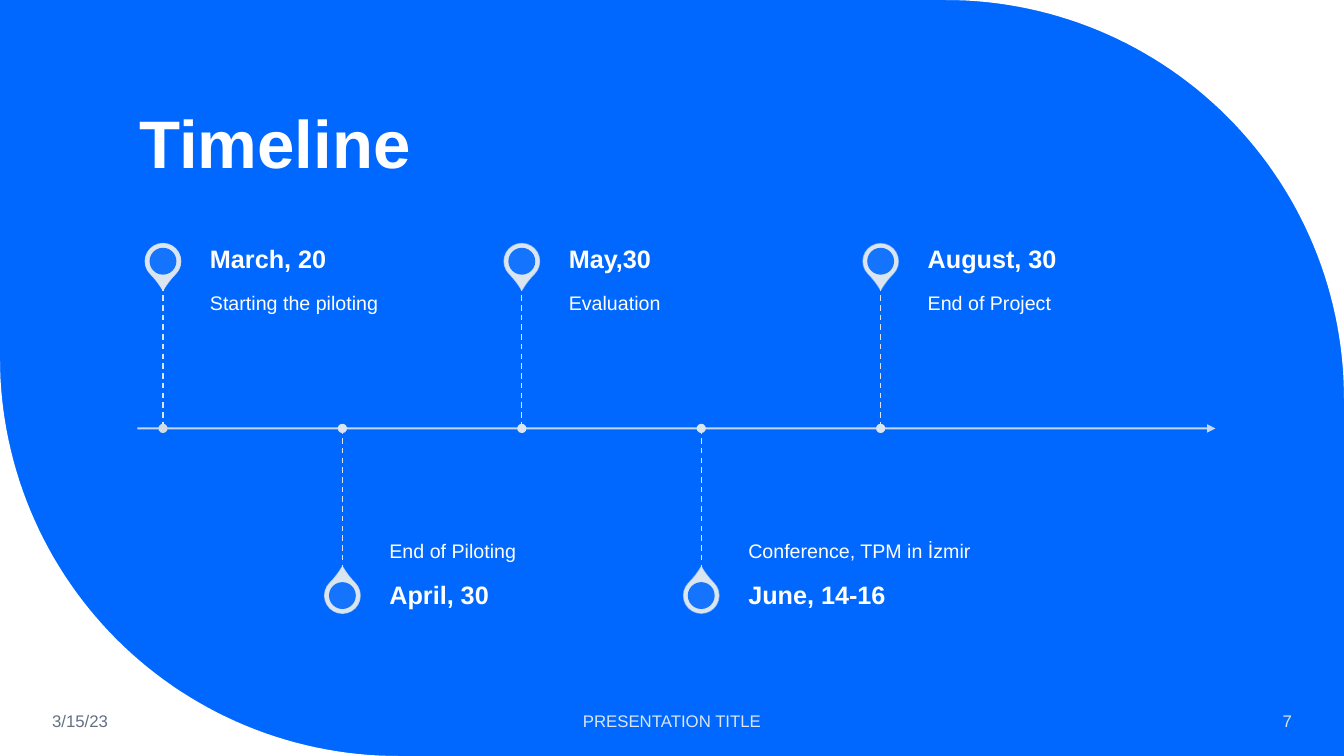
from dataclasses import dataclass
from math import cos, pi, sin

from lxml.etree import SubElement
from pptx import Presentation
from pptx.dml.color import RGBColor
from pptx.enum.dml import MSO_LINE_DASH_STYLE as Dash
from pptx.enum.shapes import MSO_CONNECTOR as Connector, MSO_SHAPE as Preset
from pptx.enum.text import MSO_ANCHOR as Anchor, PP_ALIGN as Align
from pptx.oxml.ns import qn
from pptx.util import Inches, Pt


@dataclass(frozen=True)
class Theme:
    """Colours, font and type sizes of the deck."""
    blue: str = "0068FF"
    white: str = "FFFFFF"
    mist: str = "DAE5EF"
    haze: str = "D0DBE4"
    slate: str = "637183"
    font: str = "Arial"
    title: int = 48
    date: int = 18
    body: int = 14
    footer: int = 12


class Board:
    """Draws styled elements on a slide, measured on a 160 by 90 grid."""

    def __init__(self, deck, page, theme):
        self.page, self.theme = page, theme
        self.column = deck.slide_width / 160
        self.row = deck.slide_height / 90
        self.fill(page.background, theme.blue)

    def x(self, columns):
        return round(columns * self.column)

    def y(self, rows):
        return round(rows * self.row)

    def place(self, left, top, width, height):
        return self.x(left), self.y(top), self.x(width), self.y(height)

    def fill(self, target, color):
        target.fill.solid()
        target.fill.fore_color.rgb = RGBColor.from_string(color)

    def fade(self, holder, percent):
        color = holder.find(qn("a:solidFill")).find(qn("a:srgbClr"))
        SubElement(color, qn("a:alpha"), val=str(percent * 1000))

    def corner(self, radius, turned=False):
        points = [(160, 0)]
        for step in range(61):
            angle = step / 60 * pi / 2
            points.append((160 - radius + radius * sin(angle),
                           radius - radius * cos(angle)))
        if turned:
            points = [(160 - left, 90 - top) for left, top in points]
        points = [(self.x(left), self.y(top)) for left, top in points]
        builder = self.page.shapes.build_freeform(*points[0])
        builder.add_line_segments(points[1:], close=True)
        shape = builder.convert_to_shape()
        shape.shadow.inherit = False
        self.fill(shape, self.theme.white)
        shape.line.fill.background()

    def centred(self, preset, middle, level, size, color):
        shape = self.page.shapes.add_shape(preset, *self.place(
            middle - size / 2, level - size / 2, size, size))
        shape.shadow.inherit = False
        self.fill(shape, color)
        shape.line.fill.background()
        return shape

    def pin(self, middle, level, side, opacity):
        drop = self.centred(Preset.TEAR, middle, level, 4.2, self.theme.mist)
        drop.adjustments[0] = 1.15
        drop.rotation = 225 + 90 * side
        drop.line.color.rgb = RGBColor.from_string(self.theme.mist)
        drop.line.width = Pt(1)
        self.fade(drop.element.spPr.find(qn("a:ln")), opacity)
        hole = self.centred(Preset.OVAL, middle, level, 3.2, self.theme.blue)
        self.fade(hole.element.spPr, 90)

    def line(self, start, end, width, dash=None, opacity=100, arrow=False):
        line = self.page.shapes.add_connector(
            Connector.STRAIGHT, self.x(start[0]), self.y(start[1]),
            self.x(end[0]), self.y(end[1]))
        line.line.color.rgb = RGBColor.from_string(self.theme.mist)
        line.line.width = Pt(width)
        if dash:
            line.line.dash_style = dash
        stroke = line.element.spPr.find(qn("a:ln"))
        if opacity < 100:
            self.fade(stroke, opacity)
        if arrow:
            SubElement(stroke, qn("a:tailEnd"), type="triangle")
        SubElement(line.element.spPr, qn("a:effectLst"))

    def text(self, area, words, size, color, bold=False, anchor=Anchor.MIDDLE,
             align=Align.LEFT, insets=(1.2, 0.6, 1.2, 0.6), spacing=1.0):
        box = self.page.shapes.add_textbox(*self.place(*area))
        frame = box.text_frame
        frame.word_wrap = True
        frame.vertical_anchor = anchor
        (frame.margin_left, frame.margin_top,
         frame.margin_right, frame.margin_bottom) = self.place(*insets)
        para = frame.paragraphs[0]
        para.alignment = align
        para.line_spacing = spacing
        span = para.add_run()
        span.text = words
        span.font.name = self.theme.font
        span.font.size = Pt(size)
        span.font.bold = bold
        span.font.color.rgb = RGBColor.from_string(color)

    def milestone(self, middle, axis, side, date, event, opacity, dot):
        theme, left = self.theme, middle + 5.6
        above = side < 0
        self.pin(middle, axis + 19.9 * side, side, opacity)
        self.text((left, axis - 17 if above else axis, 30.4, 17), event,
                  theme.body, theme.white, spacing=0.9,
                  anchor=Anchor.TOP if above else Anchor.BOTTOM,
                  insets=(0, 1.2, 1.2, 1.8) if above else (0, 1.8, 0, 1.2))
        self.text((left, axis + 20 * side - 3, 30.4, 6), date, theme.date,
                  theme.white, bold=True, insets=(0, 0, 1.4, 0), spacing=0.9)
        ends = sorted([axis, axis + 17 * side])
        self.line((middle, ends[0]), (middle, ends[1]), 1, Dash.DASH)
        self.centred(Preset.OVAL, middle, axis, 1.1, dot)


def main():
    deck = Presentation()
    deck.slide_width, deck.slide_height = Inches(13.33), Inches(7.5)
    page = deck.slides.add_slide(deck.slide_layouts[6])
    theme = Theme()
    board = Board(deck, page, theme)

    board.corner(47.4)
    board.corner(47.4, turned=True)
    board.text((15.4, 5, 128.3, 17.4), "Timeline", theme.title, theme.white,
               bold=True, anchor=Anchor.BOTTOM, spacing=0.9)

    axis = 51
    board.line((16.35, axis), (144.7, axis), 1.5, opacity=90, arrow=True)
    milestones = [
        ("March, 20", "Starting the piloting"),
        ("April, 30", "End of Piloting"),
        ("May,30", "Evaluation"),
        ("June, 14-16", "Conference, TPM in İzmir"),
        ("August, 30", "End of Project"),
    ]
    for index, (date, event) in enumerate(milestones):
        board.milestone(19.4 + 21.36 * index, axis, 1 if index % 2 else -1,
                        date, event, 90 - 10 * index,
                        theme.mist if index else theme.haze)

    footers = [
        (5, 22.3, "3/15/23", theme.slate, Align.LEFT),
        (53, 54, "PRESENTATION TITLE", theme.mist, Align.CENTER),
        (133.2, 21.8, "7", theme.mist, Align.RIGHT),
    ]
    for left, width, words, color, align in footers:
        board.text((left, 83.4, width, 4.8), words, theme.footer, color,
                   align=align)
    deck.save("out.pptx")


if __name__ == "__main__":
    main()
